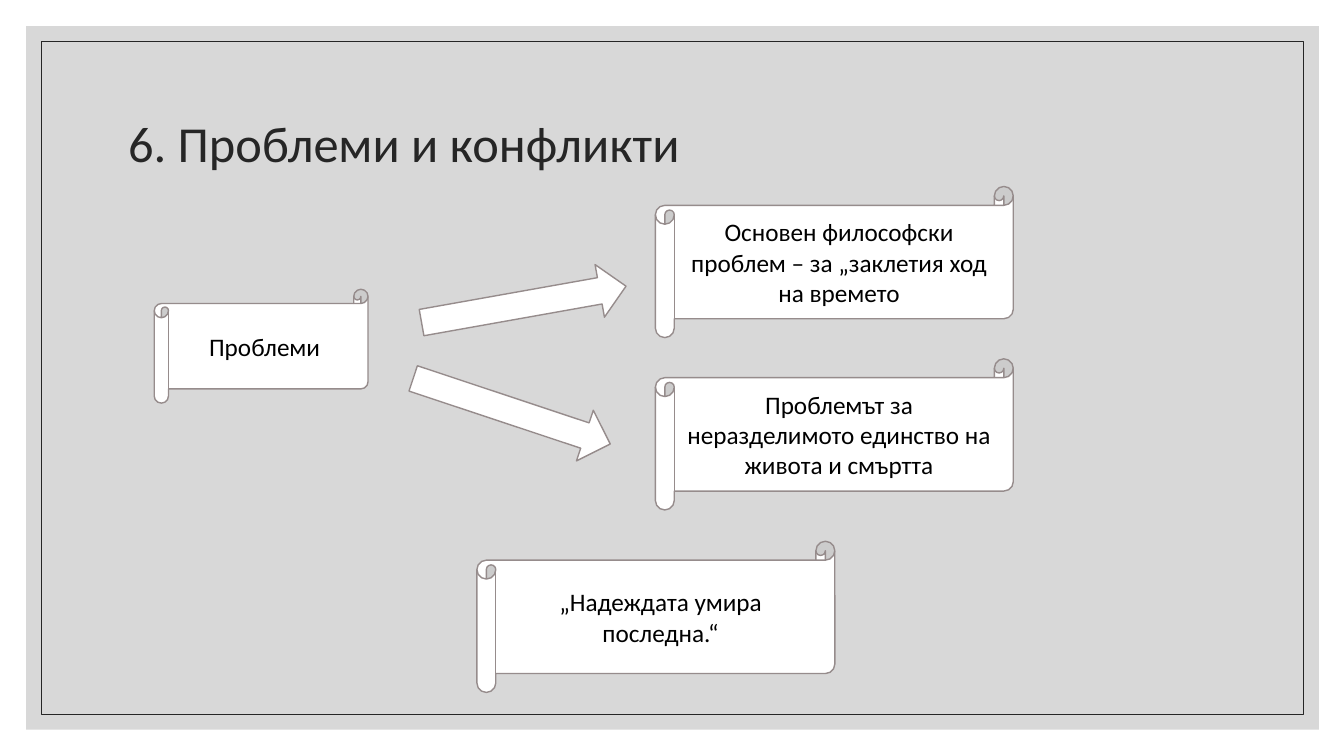
from dataclasses import dataclass

from lxml.etree import SubElement
from pptx import Presentation
from pptx.dml.color import RGBColor
from pptx.enum.shapes import MSO_SHAPE
from pptx.enum.text import MSO_ANCHOR, MSO_AUTO_SIZE, PP_ALIGN
from pptx.oxml.ns import qn
from pptx.util import Inches, Pt


@dataclass(frozen=True)
class Theme:
    font: str = "Calibri"
    title_size: int = 36
    body_size: int = 18
    panel: str = "BFBFBF"
    panel_opacity: int = 60
    dark: str = "262626"
    paper: str = "FFFFFF"
    outline: str = "968C8C"
    text: str = "000000"


THEME = Theme()


def rgb(value):
    return RGBColor.from_string(value)


def add_box(s, kind, box, fill=None, line=None, width=1):
    sp = s.shapes.add_shape(kind, *map(Inches, box))
    sp.shadow.inherit = False
    if fill:
        sp.fill.solid()
        sp.fill.fore_color.rgb = rgb(fill)
    else:
        sp.fill.background()
    if line:
        sp.line.color.rgb = rgb(line)
        sp.line.width = Pt(width)
    else:
        sp.line.fill.background()
    return sp


def write(sp, text, size, color, align):
    tf = sp.text_frame
    tf.word_wrap = True
    tf.auto_size = MSO_AUTO_SIZE.NONE
    tf.vertical_anchor = MSO_ANCHOR.MIDDLE
    p = tf.paragraphs[0]
    p.text = text
    p.alignment = align
    p.font.name = THEME.font
    p.font.size = Pt(size)
    p.font.color.rgb = rgb(color)
    return p


def add_frame(s):
    panel = add_box(s, MSO_SHAPE.RECTANGLE, (0.26, 0.26, 12.82, 6.98), THEME.panel)
    color = panel.fill._xPr.find(f".//{qn('a:srgbClr')}")
    SubElement(color, qn("a:alpha"), val=str(THEME.panel_opacity * 1000))
    add_box(s, MSO_SHAPE.RECTANGLE, (0.41, 0.41, 12.52, 6.68), line=THEME.dark, width=0.5)


def set_title(s, text):
    title = s.shapes.title
    title.left, title.top, title.width, title.height = map(Inches, (1.17, 0.7, 11, 1.5))
    p = write(title, text, THEME.title_size, THEME.dark, PP_ALIGN.LEFT)
    p.line_spacing = 0.9
    # Bring the title in front of the frame
    s.shapes._spTree.append(title._element)


def add_scroll(s, text, left, top, width=3.55, height=1.5):
    sp = add_box(s, MSO_SHAPE.HORIZONTAL_SCROLL, (left, top, width, height),
                 THEME.paper, THEME.outline)
    write(sp, text, THEME.body_size, THEME.text, PP_ALIGN.CENTER)


def add_arrow(s, left, top, rotation):
    sp = add_box(s, MSO_SHAPE.UP_ARROW, (left, top, 0.53, 2.06),
                 THEME.paper, THEME.outline)
    sp.rotation = rotation


def main():
    prs = Presentation()
    prs.slide_width, prs.slide_height = Inches(13.33), Inches(7.5)
    s = prs.slides.add_slide(prs.slide_layouts[5])

    # Background frame and title
    add_frame(s)
    set_title(s, "6. Проблеми и конфликти")

    # Topic, its two problems and the closing thought
    add_scroll(s, "Проблеми", 1.53, 2.87, 2.12, 1.13)
    add_scroll(s, "Основен философски проблем – за „заклетия ход на времето", 6.5, 1.85)
    add_scroll(s, "Проблемът за неразделимото единство на живота и смъртта", 6.5, 3.56)
    add_scroll(s, "„Надеждата умира последна.“", 4.73, 5.37)

    # Arrows from the topic to each problem
    add_arrow(s, 4.93, 1.99, 79.9)
    add_arrow(s, 4.81, 3.05, 108.4)

    prs.save("out.pptx")


if __name__ == "__main__":
    main()
